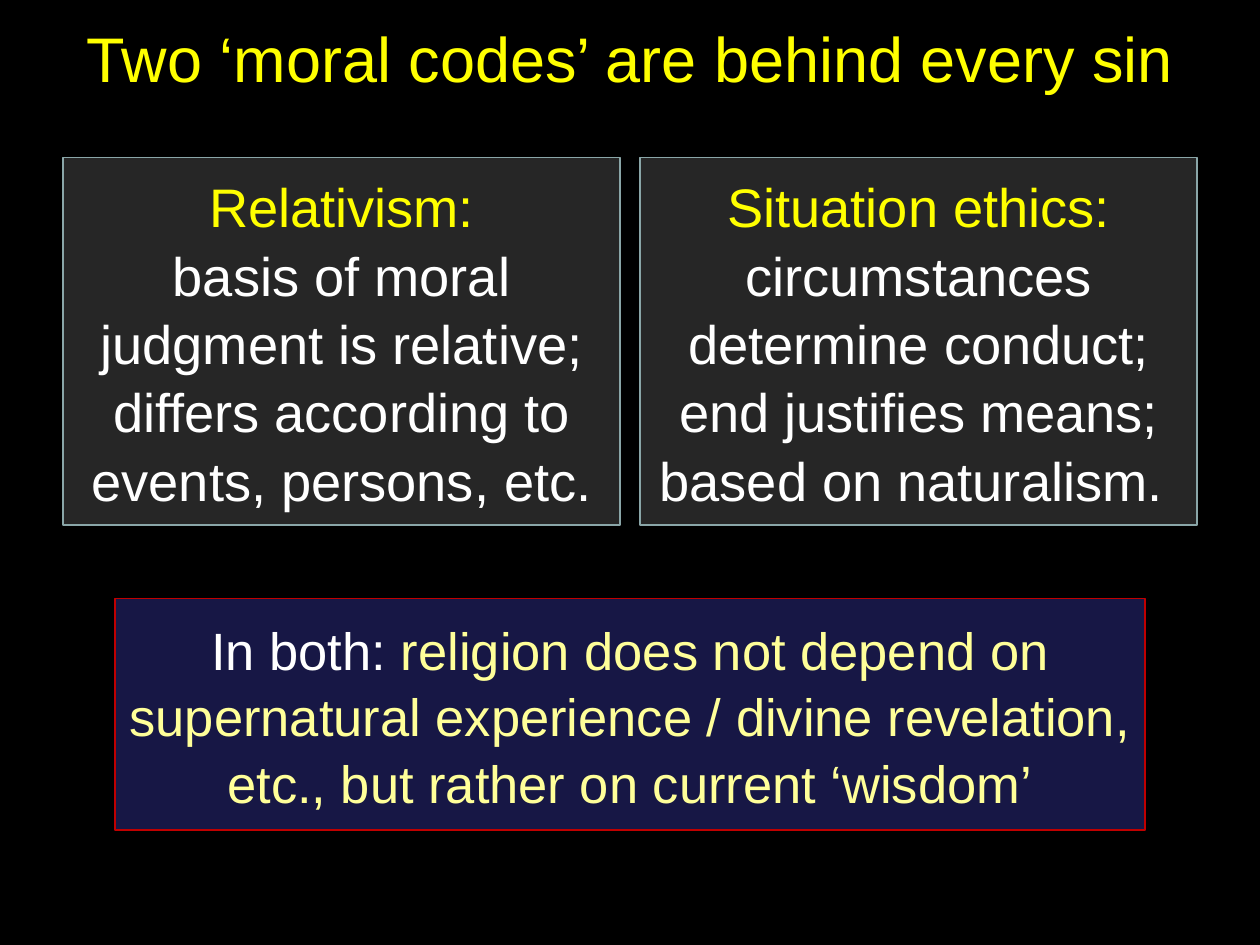
from pptx import Presentation
from pptx.dml.color import RGBColor
from pptx.enum.shapes import MSO_SHAPE
from pptx.enum.text import MSO_ANCHOR, PP_ALIGN
from pptx.util import Pt

BLACK = RGBColor(0x00, 0x00, 0x00)
WHITE = RGBColor(0xFF, 0xFF, 0xFF)
YELLOW = RGBColor(0xFF, 0xFF, 0x00)
PALE_YELLOW = RGBColor(0xFF, 0xFF, 0x99)
CHARCOAL = RGBColor(0x26, 0x26, 0x26)
GREY_TEAL = RGBColor(0x8A, 0xA6, 0xA8)
NAVY = RGBColor(0x17, 0x17, 0x45)
RED = RGBColor(0xC0, 0x00, 0x00)

SLIDE_WIDTH, SLIDE_HEIGHT = 720, 540
MARGIN = 36
CODE_WIDTH = 318.24

CODES = [
    [[("Relativism:\v", YELLOW),
      ("basis of moral judgment is relative; differs according to "
       "events, persons, etc.", WHITE)]],
    [[("Situation ethics:", YELLOW)],
     [("circumstances determine conduct; end justifies means; "
       "based on naturalism. ", WHITE)]],
]
CONCLUSION = [[
    ("In both: ", WHITE),
    ("religion does not depend on\vsupernatural experience / divine revelation,\v"
     "etc., but rather on current ‘wisdom’", PALE_YELLOW),
]]


def write_text(frame, paragraphs, size, line_spacing):
    """Fill a frame with centred paragraphs, each a list of (text, colour)."""
    frame.word_wrap = True
    frame.vertical_anchor = MSO_ANCHOR.MIDDLE
    for index, parts in enumerate(paragraphs):
        para = frame.add_paragraph() if index else frame.paragraphs[0]
        layout = {"alignment": PP_ALIGN.CENTER, "line_spacing": line_spacing,
                  "space_before": Pt(0), "space_after": Pt(0)}
        for name, value in layout.items():
            setattr(para, name, value)
        for text, color in parts:
            for number, line in enumerate(text.split("\v")):
                if number:
                    para.add_line_break()
                if line:
                    span = para.add_run()
                    span.text = line
                    for name, value in {"name": "Arial", "size": Pt(size)}.items():
                        setattr(span.font, name, value)
                    span.font.color.rgb = color


def add_title(page, left, top, width, height):
    title = page.shapes.title
    bounds = {"left": left, "top": top, "width": width, "height": height}
    for name, value in bounds.items():
        setattr(title, name, Pt(value))
    write_text(title.text_frame,
               [[("Two ‘moral codes’ are behind every sin", YELLOW)]], 36, 1)


def add_panel(page, bounds, paragraphs, size, fill, line):
    box = page.shapes.add_shape(MSO_SHAPE.RECTANGLE, *map(Pt, bounds))
    box.shadow.inherit = False
    box.fill.solid()
    box.fill.fore_color.rgb = fill
    box.line.color.rgb = line
    box.line.width = Pt(1)
    write_text(box.text_frame, paragraphs, size, 1.05)


def add_codes(page, left, top, width, height):
    """Place the two codes at the left and right edges of the region."""
    step = width - CODE_WIDTH
    for index, paragraphs in enumerate(CODES):
        bounds = (left + index * step, top, CODE_WIDTH, height)
        add_panel(page, bounds, paragraphs, 31, CHARCOAL, GREY_TEAL)


def main():
    deck = Presentation()
    deck.slide_width, deck.slide_height = Pt(SLIDE_WIDTH), Pt(SLIDE_HEIGHT)
    page = deck.slides.add_slide(deck.slide_layouts[5])
    page.background.fill.solid()
    page.background.fill.fore_color.rgb = BLACK

    content_width = SLIDE_WIDTH - 2 * MARGIN
    add_title(page, MARGIN, 0, content_width, 66)
    add_codes(page, MARGIN, 90, content_width, 210)
    add_panel(page, (65.5, 342, 589, 132.5), CONCLUSION, 30, NAVY, RED)
    deck.save("out.pptx")


if __name__ == "__main__":
    main()
